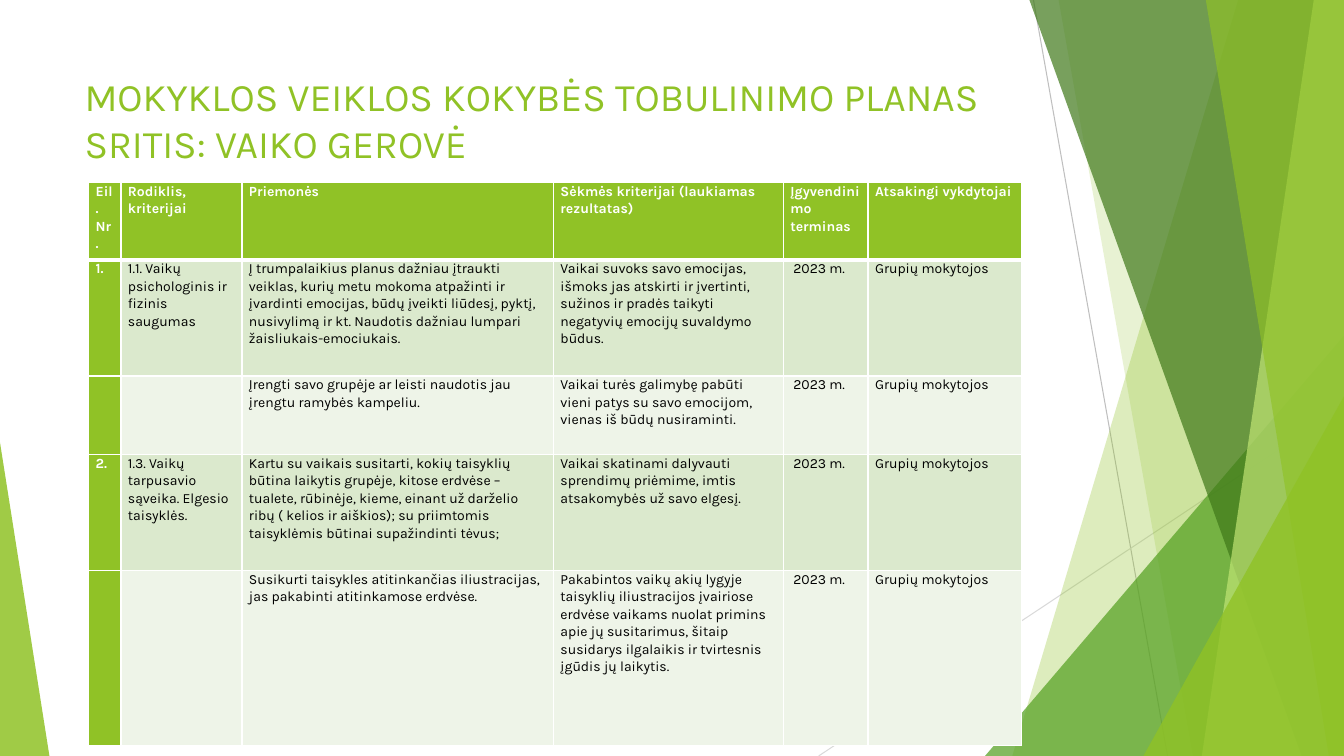
from lxml.etree import SubElement
from pptx import Presentation
from pptx.dml.color import RGBColor
from pptx.enum.shapes import MSO_CONNECTOR as Connector, MSO_SHAPE as Shape
from pptx.oxml.ns import qn
from pptx.util import Inches, Pt

WIDTH, HEIGHT = 13.33, 7.5
GREEN, WHITE, BLACK = "90C226", "FFFFFF", "000000"
ROW_TINTS = ["DBE9CD", "EEF4E8"]

COLUMN_WIDTHS = [0.32, 1.2, 3.09, 2.28, 0.84, 1.52]
ROW_HEIGHTS = [0.77, 1.15, 0.78, 1.15, 1.74]
TERM_COLUMN = 4
TERM, STAFF = "2023 m.", "Grupių mokytojos"
PLAN = [
    ["Eil. Nr.", "Rodiklis, kriterijai", "Priemonės",
     "Sėkmės kriterijai (laukiamas rezultatas)",
     "Įgyvendinimo terminas", "Atsakingi vykdytojai"],
    ["1.", "1.1. Vaikų psichologinis ir fizinis saugumas",
     "Į trumpalaikius planus dažniau įtraukti veiklas, kurių metu mokoma "
     "atpažinti ir įvardinti emocijas, būdų įveikti liūdesį, pyktį, "
     "nusivylimą ir kt. Naudotis dažniau lumpari žaisliukais-emociukais.",
     "Vaikai suvoks savo emocijas, išmoks jas atskirti ir įvertinti, "
     "sužinos ir pradės taikyti negatyvių emocijų suvaldymo būdus.",
     TERM, STAFF],
    ["", "",
     "Įrengti savo grupėje ar leisti naudotis jau įrengtu ramybės kampeliu.",
     "Vaikai turės galimybę pabūti vieni patys su savo emocijom, "
     "vienas iš būdų nusiraminti.",
     TERM, STAFF],
    ["2.", "1.3. Vaikų tarpusavio sąveika. Elgesio taisyklės.",
     "Kartu su vaikais susitarti, kokių taisyklių būtina laikytis grupėje, "
     "kitose erdvėse – tualete, rūbinėje, kieme, einant už darželio ribų "
     "( kelios ir aiškios); su priimtomis taisyklėmis būtinai supažindinti tėvus;",
     "Vaikai skatinami dalyvauti sprendimų priėmime, "
     "imtis atsakomybės už savo elgesį.",
     TERM, STAFF],
    ["", "",
     "Susikurti taisykles atitinkančias iliustracijas, "
     "jas pakabinti atitinkamose erdvėse.",
     "Pakabintos vaikų akių lygyje taisyklių iliustracijos įvairiose erdvėse "
     "vaikams nuolat primins apie jų susitarimus, šitaip susidarys ilgalaikis "
     "ir tvirtesnis įgūdis jų laikytis.",
     TERM, STAFF],
]


def rgb(value):
    return RGBColor.from_string(value)


def write(frame, text, size=10, color=BLACK, bold=False, spacing=1.0):
    """Fill a text frame, one paragraph per line of text."""
    for index, line in enumerate(text.split("\n")):
        paragraph = frame.paragraphs[0] if index == 0 else frame.add_paragraph()
        paragraph.line_spacing = spacing
        run = paragraph.add_run()
        run.text = line
        run.font.name = "Karla"
        run.font.size = Pt(size)
        run.font.bold = bold
        run.font.color.rgb = rgb(color)


class SlideBuilder:
    def __init__(self, slide):
        self.slide = slide
        self.shapes = slide.shapes

    def paint(self, shape, color, opacity):
        shape.shadow.inherit = False
        shape.line.fill.background()
        shape.fill.solid()
        shape.fill.fore_color.rgb = rgb(color)
        tint = shape.fill._xPr.find(".//" + qn("a:srgbClr"))
        SubElement(tint, qn("a:alpha")).set("val", str(opacity * 1000))

    def line(self, start, end, color):
        points = [Inches(value) for value in (*start, *end)]
        connector = self.shapes.add_connector(Connector.STRAIGHT, *points)
        connector.line.color.rgb = rgb(color)
        connector.line.width = Pt(0.75)
        SubElement(connector._element.spPr, qn("a:effectLst"))

    def band(self, top_x, bottom_x, color, opacity):
        """Full-height area between a slanted edge and the right slide edge."""
        builder = self.shapes.build_freeform(Inches(top_x), 0)
        corners = [(WIDTH, 0), (WIDTH, HEIGHT), (bottom_x, HEIGHT)]
        builder.add_line_segments([(Inches(x), Inches(y)) for x, y in corners])
        self.paint(builder.convert_to_shape(), color, opacity)

    def triangle(self, left, top, width, apex, color, opacity):
        """Triangle standing on the bottom edge of the slide."""
        shape = self.shapes.add_shape(
            Shape.ISOSCELES_TRIANGLE, Inches(left), Inches(top),
            Inches(width), Inches(HEIGHT - top))
        shape.adjustments[0] = apex
        self.paint(shape, color, opacity)

    def title(self, text, left, top, width, height):
        box = self.shapes.add_textbox(
            Inches(left), Inches(top), Inches(width), Inches(height))
        box.text_frame.word_wrap = True
        write(box.text_frame, text, size=27.9, color=GREEN)

    def borders(self, cell, top=1, bottom=1):
        properties = cell._tc.get_or_add_tcPr()
        for side, width in (("L", 1), ("R", 1), ("T", top), ("B", bottom)):
            border = SubElement(properties, qn("a:ln" + side), w=str(Pt(width)))
            fill = SubElement(border, qn("a:solidFill"))
            SubElement(fill, qn("a:srgbClr"), val=WHITE)

    def cell(self, cell, text, row, column):
        accent = row == 0 or column == 0
        self.borders(cell, top=3 if row == 1 else 1, bottom=3 if row == 0 else 1)
        cell.fill.solid()
        cell.fill.fore_color.rgb = rgb(GREEN if accent else ROW_TINTS[(row - 1) % 2])
        indented = row > 0 and column == TERM_COLUMN
        cell.margin_left = Inches(0.1 if indented else 0.07)
        cell.margin_right = Inches(0.07)
        cell.margin_top = cell.margin_bottom = 0
        if text:
            write(cell.text_frame, text, color=WHITE if accent else BLACK,
                  bold=accent, spacing=1.07)

    def table(self, rows, left, top):
        table = self.shapes.add_table(
            len(rows), len(COLUMN_WIDTHS), Inches(left), Inches(top),
            Inches(sum(COLUMN_WIDTHS)), Inches(sum(ROW_HEIGHTS))).table
        table.first_row = table.horz_banding = False
        for column, width in zip(table.columns, COLUMN_WIDTHS):
            column.width = Inches(width)
        for row, height in zip(table.rows, ROW_HEIGHTS):
            row.height = Inches(height)
        for row, texts in enumerate(rows):
            for column, text in enumerate(texts):
                self.cell(table.cell(row, column), text, row, column)


def main():
    presentation = Presentation()
    presentation.slide_width = Inches(WIDTH)
    presentation.slide_height = Inches(HEIGHT)
    slide = presentation.slides.add_slide(presentation.slide_layouts[6])
    builder = SlideBuilder(slide)

    # Faceted decoration, from back to front
    builder.line((10.25, 0), (11.58, HEIGHT), "BFBFBF")
    builder.line((WIDTH, 4.03), (8.12, HEIGHT), "D9D9D9")
    builder.band(12.28, 10.04, GREEN, 30)
    builder.band(10.5, 11.83, GREEN, 20)
    builder.triangle(9.77, 3.33, 3.56, 1, "54A021", 72)
    builder.band(10.21, 12.91, "3F7819", 70)
    builder.band(13.03, 11.92, "C0E474", 70)
    builder.band(11.96, 13.18, GREEN, 65)
    builder.triangle(11.34, 3.93, 1.99, 1, GREEN, 80)
    builder.triangle(0, 4.39, 0.49, 0, GREEN, 85)

    # Title and plan
    builder.title("MOKYKLOS VEIKLOS KOKYBĖS TOBULINIMO PLANAS\n"
                  "SRITIS: VAIKO GEROVĖ", 0.74, 0.67, 9.4, 1.44)
    builder.table(PLAN, 0.88, 1.81)

    presentation.save("out.pptx")


if __name__ == "__main__":
    main()
